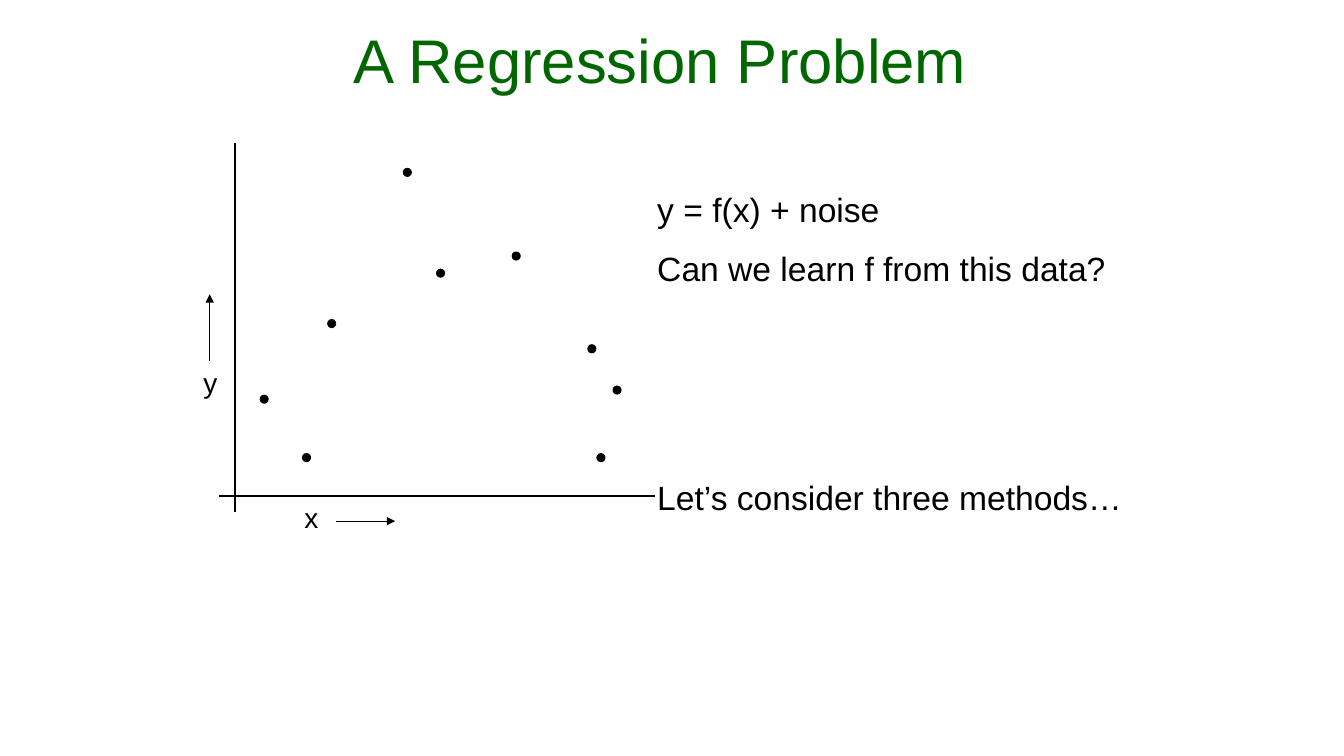
"""Build a slide that poses a regression problem with a hand-drawn scatter plot."""
from lxml import etree
from pptx import Presentation
from pptx import util as u
from pptx.dml.color import RGBColor
from pptx.enum import shapes, text
from pptx.oxml.ns import qn

BLACK = "000000"
GREEN = "006600"
DOT_SIZE = 0.08

presentation = Presentation()
presentation.slide_width = u.Inches(13.33)
presentation.slide_height = u.Inches(7.5)
slide = presentation.slides.add_slide(presentation.slide_layouts[6])


def color(hex_string):
    return RGBColor.from_string(hex_string)


def add_text(box, paragraphs, size, hex_string=BLACK, align=text.PP_ALIGN.LEFT,
             anchor=text.MSO_ANCHOR.TOP):
    frame = slide.shapes.add_textbox(*map(u.Inches, box)).text_frame
    frame.word_wrap = True
    frame.vertical_anchor = anchor
    for index, (wording, space_before) in enumerate(paragraphs):
        paragraph = frame.add_paragraph() if index else frame.paragraphs[0]
        paragraph.alignment = align
        paragraph.space_before = u.Pt(space_before)
        run = paragraph.add_run()
        run.text = wording
        run.font.name = "Arial"
        run.font.size = u.Pt(size)
        run.font.color.rgb = color(hex_string)


add_text((0.33, 0.17, 12.44, 0.83), [("A Regression Problem", 0)], 44, GREEN,
         text.PP_ALIGN.CENTER, text.MSO_ANCHOR.BOTTOM)

lines = [
    ((2.33, 1.42, 2.33, 5.08), 1.5, False),
    ((2.17, 4.92, 6.5, 4.92), 1.5, False),
    ((3.33, 5.17, 3.92, 5.17), 0.75, True),
    ((2.08, 3.58, 2.08, 2.92), 0.75, True),
]
for ends, width, has_arrow in lines:
    connector = slide.shapes.add_connector(
        shapes.MSO_CONNECTOR.STRAIGHT, *map(u.Inches, ends))
    connector.line.color.rgb = color(BLACK)
    connector.line.width = u.Pt(width)
    if has_arrow:
        etree.SubElement(connector.line._get_or_add_ln(), qn("a:tailEnd"), type="triangle")
    etree.SubElement(connector._element.spPr, qn("a:effectLst"))

data_points = [(2.58, 3.92), (3, 4.5), (3.25, 3.17), (4, 1.67), (4.33, 2.67),
               (5.08, 2.5), (5.92, 4.5), (6.08, 3.83), (5.83, 3.42)]
for left, top in data_points:
    dot = slide.shapes.add_shape(
        shapes.MSO_SHAPE.OVAL, *map(u.Inches, (left, top, DOT_SIZE, DOT_SIZE)))
    dot.shadow.inherit = False
    dot.fill.solid()
    dot.fill.fore_color.rgb = color(BLACK)
    dot.line.color.rgb = color(BLACK)
    dot.line.width = u.Pt(0.75)

for label, left, top in [("x", 2.92, 4.92), ("y", 1.92, 3.58)]:
    add_text((left, top, 0.33, 0.43), [(label, 0)], 20)

add_text((6.42, 1.83, 5.08, 3.53), [
    ("y = f(x) + noise", 0),
    ("Can we learn f from this data?", 13),
    ("Let’s consider three methods…", 135),
], 24)

presentation.save("out.pptx")
